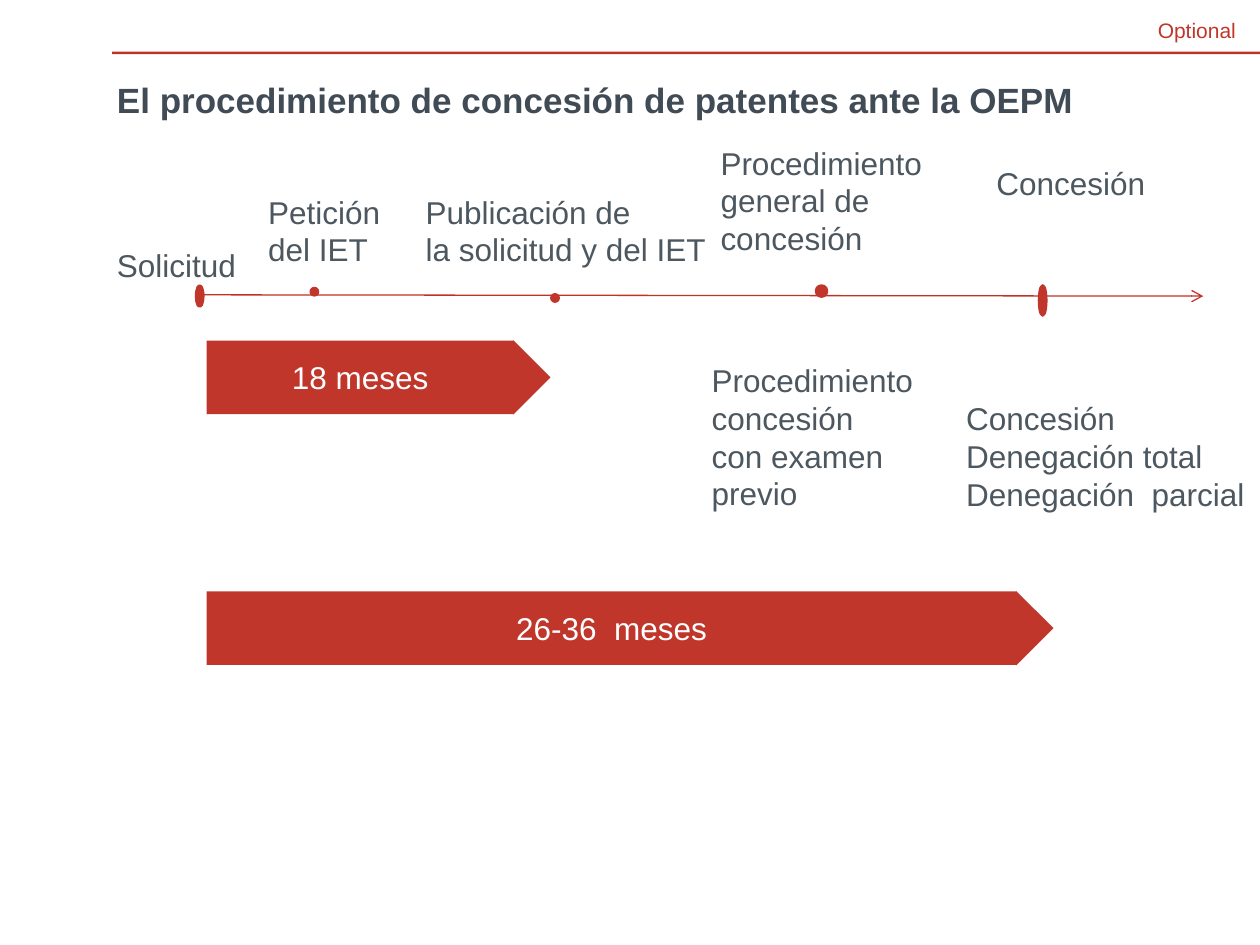
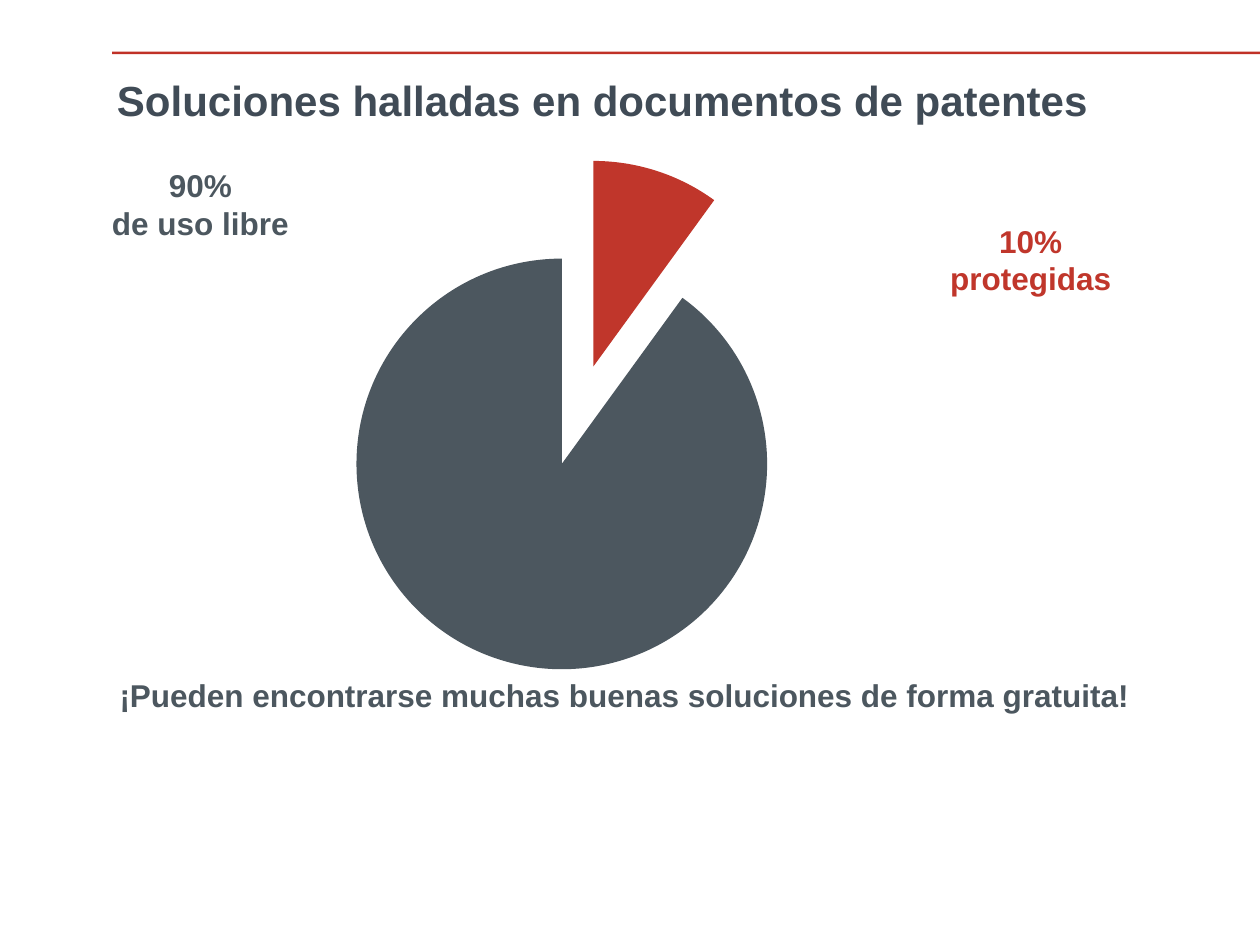
"""Builds two slides on patents: the granting timeline and a pie of free solutions."""
from dataclasses import dataclass

from lxml import etree
from pptx import Presentation
from pptx import util as u
from pptx.chart import data as cd
from pptx.dml import color as col
from pptx.enum import chart as ch
from pptx.enum import shapes, text
from pptx.oxml import ns


@dataclass(frozen=True)
class Theme:
    font: str = "Arial"
    band: str = "C03127"
    head: str = "404B56"
    line: str = "BF3226"
    red: str = "C0362B"
    gray: str = "4C575F"
    white: str = "FFFFFF"
    note: int = 12
    body: int = 18
    mid: int = 20
    big: int = 24


class Deck:
    def __init__(self, theme):
        self.theme = theme
        self.prs = Presentation()
        self.prs.slide_width, self.prs.slide_height = u.Inches(10), u.Inches(7.5)
        self.slide = None

    def add(self, title, size):
        self.slide = self.prs.slides.add_slide(self.prs.slide_layouts[6])
        self.shape("RECTANGLE", (0.89, 0.41, 9.11, 0.02), self.theme.band)
        self.text(title, (0.83, 0.44, 8.41, 0.7), size=size, color=self.theme.head,
                  bold=True, anchor="MIDDLE")

    def fill(self, frame, words, size, color, bold=False, anchor="TOP", align="LEFT",
             wrap=True):
        form = {"word_wrap": wrap, "vertical_anchor": getattr(text.MSO_ANCHOR, anchor)}
        for key, val in form.items():
            setattr(frame, key, val)
        frame.text = words
        font = {"name": self.theme.font, "size": u.Pt(size), "bold": bold}
        for par in frame.paragraphs:
            par.alignment = getattr(text.PP_ALIGN, align)
            for key, val in font.items():
                setattr(par.font, key, val)
            par.font.color.rgb = col.RGBColor.from_string(color)

    def text(self, words, box, size=None, color=None, **form):
        frame = self.slide.shapes.add_textbox(*map(u.Inches, box)).text_frame
        self.fill(frame, words, size or self.theme.body, color or self.theme.gray, **form)

    def shape(self, kind, box, color, edge=0):
        item = self.slide.shapes.add_shape(
            getattr(shapes.MSO_SHAPE, kind), *map(u.Inches, box))
        item.shadow.inherit = False
        item.fill.solid()
        item.fill.fore_color.rgb = col.RGBColor.from_string(color)
        if edge:
            item.line.color.rgb = col.RGBColor.from_string(color)
            item.line.width = u.Pt(edge)
        else:
            item.line.fill.background()
        return item

    def dot(self, left, top, wide, high):
        self.shape("OVAL", (left, top, wide, high), self.theme.red, edge=2)

    def span(self, words, top, wide):
        item = self.shape("RIGHT_ARROW", (1.64, top, wide, 0.59), self.theme.red)
        item.adjustments[0], item.adjustments[1] = 0.99, 0.5
        self.fill(item.text_frame, words, self.theme.body, self.theme.white,
                  anchor="MIDDLE", align="CENTER")

    def arrow(self, start, end):
        item = self.slide.shapes.add_connector(
            shapes.MSO_CONNECTOR.STRAIGHT, *map(u.Inches, start + end))
        item.line.color.rgb = col.RGBColor.from_string(self.theme.line)
        item.line.width = u.Pt(0.75)
        edge = item.line._get_or_add_ln()
        etree.SubElement(edge, ns.qn("a:tailEnd"), type="arrow")
        etree.SubElement(item._element.spPr, ns.qn("a:effectLst"))

    def pie(self, box, parts, burst):
        data = cd.CategoryChartData()
        data.categories = [str(num + 1) for num in range(len(parts))]
        data.add_series("Series 1", [val for val, _ in parts])
        chart = self.slide.shapes.add_chart(
            ch.XL_CHART_TYPE.PIE, *map(u.Inches, box), data).chart
        chart.has_legend = chart.has_title = False
        font = {"name": self.theme.font, "size": u.Pt(10)}
        for key, val in font.items():
            setattr(chart.font, key, val)
        chart.font.color.rgb = col.RGBColor.from_string(self.theme.gray)
        plot = chart.plots[0]
        plot.vary_by_categories = True
        row = plot.series[0]
        for num, (_, color) in enumerate(parts):
            form = row.points[num].format
            form.fill.solid()
            form.fill.fore_color.rgb = col.RGBColor.from_string(color)
            form.line.fill.background()
        gap = etree.Element(ns.qn("c:explosion"), val=str(burst))
        row._element.find(ns.qn("c:tx")).addnext(gap)


def steps(deck):
    look = deck.theme
    deck.add("El procedimiento de concesión de patentes ante la OEPM", look.mid)
    deck.arrow((1.56, 2.34), (9.55, 2.35))
    for spot in ((1.56, 2.27, 0.05, 0.16), (2.47, 2.29, 0.05, 0.05),
                 (4.38, 2.34, 0.05, 0.05), (6.48, 2.27, 0.08, 0.08),
                 (8.25, 2.27, 0.05, 0.23)):
        deck.dot(*spot)
    deck.text("Solicitud", (0.83, 1.9, 1.15, 0.4), wrap=False)
    deck.text("Petición del IET", (2.03, 1.48, 1.42, 0.71))
    deck.text("Publicación de\nla solicitud y del IET", (3.28, 1.48, 2.45, 0.71))
    deck.text("Procedimiento general de concesión", (5.62, 1.09, 1.88, 1.01))
    deck.text("Concesión", (7.81, 1.25, 1.72, 0.4))
    deck.text("Procedimiento\nconcesión\ncon examen previo", (5.55, 2.81, 2.03, 1.31),
              anchor="MIDDLE")
    deck.text("Concesión\nDenegación total\nDenegación  parcial",
              (7.57, 3.12, 2.43, 1.01), wrap=False)
    deck.text("Optional", (9.09, 0.09, 0.91, 0.3), size=look.note, color=look.red)
    deck.span("18 meses", 2.7, 2.73)
    deck.span("26-36  meses", 4.69, 6.72)


def share(deck):
    look = deck.theme
    deck.add("Soluciones halladas en documentos de patentes", look.big)
    deck.pie((1.45, 1.12, 6.27, 4.35), ((10, look.red), (90, look.gray)), burst=25)
    form = {"bold": True, "wrap": False}
    deck.text("10%\nprotegidas", (7.44, 1.71, 1.48, 0.7), color=look.red,
              align="CENTER", **form)
    deck.text("90%\nde uso libre", (0.78, 1.27, 1.62, 0.71), align="CENTER", **form)
    deck.text("¡Pueden encontrarse muchas buenas soluciones de forma gratuita!",
              (0.85, 5.32, 8.22, 0.4), **form)


def main():
    deck = Deck(Theme())
    steps(deck)
    share(deck)
    deck.prs.save("out.pptx")


if __name__ == "__main__":
    main()
